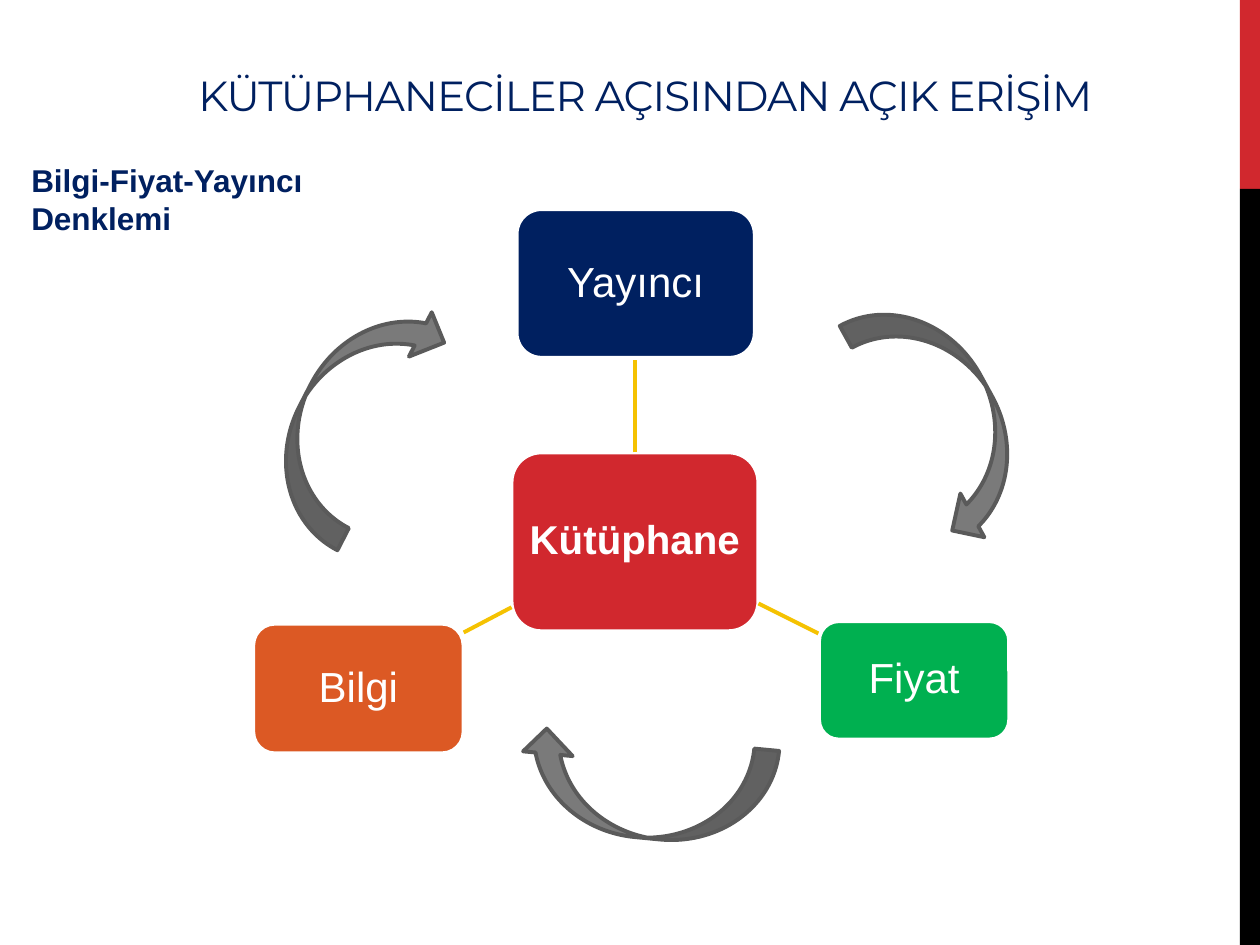
import pptx
import pptx.util
import pptx.dml.color
import pptx.enum.shapes
import pptx.enum.text
import pptx.oxml
import pptx.oxml.ns

# Grid: 100 columns by 75 rows
SLIDE_WIDTH = pptx.util.Inches(10)
SLIDE_HEIGHT = pptx.util.Inches(7.5)
COLUMNS, ROWS = 100, 75

COLORS = {
    "navy": "002060", "red": "D1282E", "black": "000000", "white": "FFFFFF",
    "green": "00B050", "orange": "DC5924", "yellow": "F5C201",
    "gray": "7A7A7A", "dark gray": "5A5A5A",
}
SHAPES = pptx.enum.shapes.MSO_SHAPE
ALIGN = pptx.enum.text.PP_ALIGN
ANCHOR = pptx.enum.text.MSO_ANCHOR
OUTLINE = 2.25


def across(columns):
    return round(SLIDE_WIDTH * columns / COLUMNS)


def down(rows):
    return round(SLIDE_HEIGHT * rows / ROWS)


def place(left, top, width, height):
    return across(left), down(top), across(width), down(height)


def color(name):
    return pptx.dml.color.RGBColor.from_string(COLORS[name])


def set_all(target, values):
    for name, value in values.items():
        setattr(target, name, value)


def write(shape, text, font_color, font, frame, align=ALIGN.LEFT):
    """Put one formatted paragraph in a shape and return its span."""
    set_all(shape.text_frame, {"word_wrap": True, **frame})
    para = shape.text_frame.paragraphs[0]
    para.alignment = align
    span = para.add_run()
    span.text = text
    set_all(span.font, font)
    span.font.color.rgb = color(font_color)
    return span


def add_text(page, area, *text_format):
    return write(page.shapes.add_textbox(*place(*area)), *text_format)


def add_figure(page, kind, area, fill, line=None, rotation=0):
    figure = page.shapes.add_shape(kind, *place(*area))
    figure.shadow.inherit = False
    figure.rotation = rotation
    figure.fill.solid()
    figure.fill.fore_color.rgb = color(fill)
    if line:
        figure.line.color.rgb = color(line)
        figure.line.width = pptx.util.Pt(OUTLINE)
    else:
        figure.line.fill.background()
    return figure


def add_card(page, text, area, fill, size=24, bold=False):
    card = add_figure(page, SHAPES.ROUNDED_RECTANGLE, area, fill, "white")
    font = {"name": "Arial", "size": pptx.util.Pt(size), "bold": bold}
    frame = {"vertical_anchor": ANCHOR.MIDDLE, "margin_left": 0, "margin_right": 0}
    write(card, text, "white", font, frame, ALIGN.CENTER)
    card.text_frame.paragraphs[0].line_spacing = 0.9


def add_link(page, start, end):
    link = page.shapes.add_connector(
        pptx.enum.shapes.MSO_CONNECTOR.STRAIGHT,
        across(start[0]), down(start[1]), across(end[0]), down(end[1]))
    link.line.color.rgb = color("yellow")
    link.line.width = pptx.util.Pt(OUTLINE)
    properties = link._element.spPr
    properties.append(pptx.oxml.parse_xml(
        "<a:effectLst %s/>" % pptx.oxml.ns.nsdecls("a")))


def main():
    deck = pptx.Presentation()
    set_all(deck, {"slide_width": SLIDE_WIDTH, "slide_height": SLIDE_HEIGHT})
    page = deck.slides.add_slide(deck.slide_layouts[6])

    # Side band
    add_figure(page, SHAPES.RECTANGLE, (98.4, 0, 1.6, 15), "red")
    add_figure(page, SHAPES.RECTANGLE, (98.4, 15, 1.6, 60), "black")

    # Title
    title = add_text(
        page, (8.6, 2.9, 85.2, 7.1), "KÜTÜPHANECİLER AÇISINDAN AÇIK ERİŞİM", "navy",
        {"name": "Montserrat", "size": pptx.util.Pt(24)},
        {"vertical_anchor": ANCHOR.BOTTOM}, ALIGN.CENTER)
    title._r.get_or_add_rPr().set("spc", "-60")

    # Hub, links and outer cards
    add_card(page, "Kütüphane", (40.6, 35.9, 19.6, 14.2), "red", 23, True)
    for start, end in (
        ((50.4, 35.9), (50.4, 28.4)),
        ((60.2, 47.9), (65, 50.3)),
        ((40.6, 48.2), (36.8, 50.2)),
    ):
        add_link(page, start, end)
    for text, area, fill in (
        ("Yayıncı", (41, 16.6, 18.9, 11.8), "navy"),
        ("Fiyat", (65, 49.3, 15.1, 9.4), "green"),
        ("Bilgi", (20.1, 49.5, 16.7, 10.3), "orange"),
    ):
        add_card(page, text, area, fill)

    # Cycle of curved arrows
    for left, top, rotation in ((17.7, 28.8, 297.2), (64.8, 29, 61.2), (41, 58.6, 185.5)):
        add_figure(page, SHAPES.CURVED_DOWN_ARROW, (left, top, 20.5, 7.9),
                   "gray", "dark gray", rotation)

    # Caption
    add_text(page, (1.5, 12.3, 32.4, 7), "Bilgi-Fiyat-Yayıncı Denklemi", "navy",
             {"name": "Arial", "size": pptx.util.Pt(18), "bold": True}, {})

    deck.save("out.pptx")


if __name__ == "__main__":
    main()
